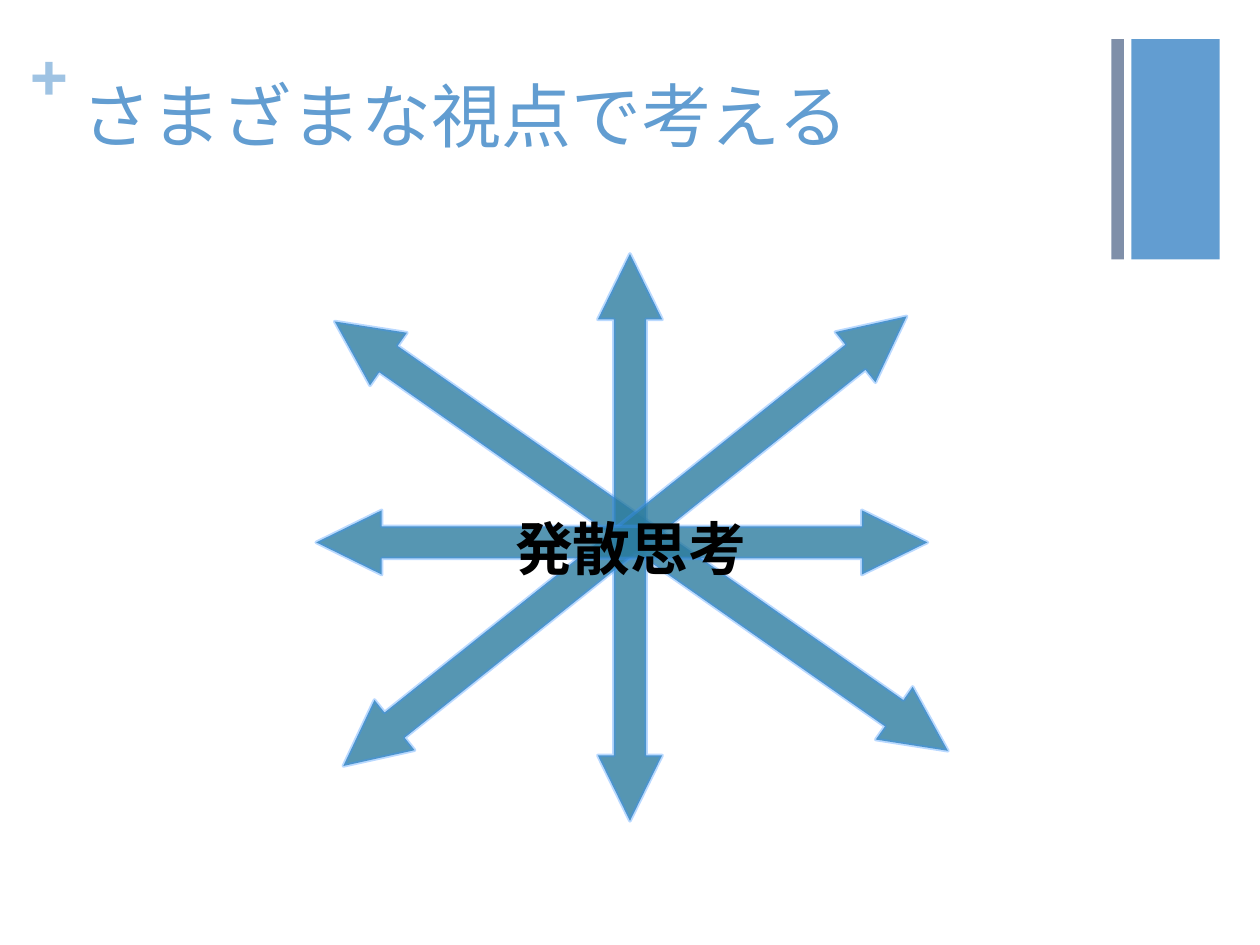
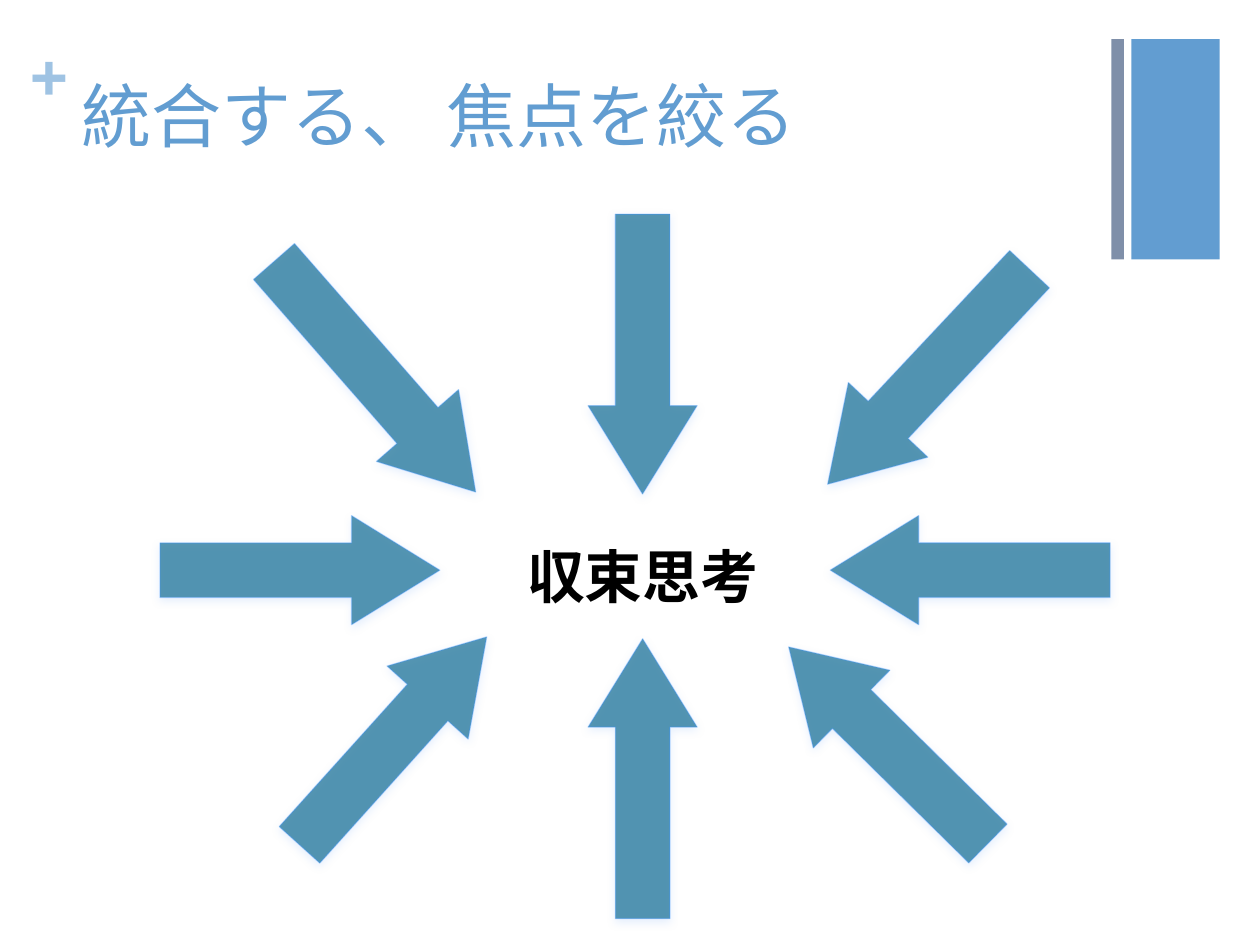
from lxml.etree import SubElement
from pptx import Presentation
from pptx.dml.color import RGBColor
from pptx.enum.shapes import MSO_SHAPE
from pptx.enum.text import MSO_ANCHOR, PP_ALIGN
from pptx.oxml.ns import qn
from pptx.util import Inches, Pt

BLUE = RGBColor(0x62, 0x9D, 0xD1)
PALE_BLUE = RGBColor(0x9F, 0xC3, 0xE3)
SLATE = RGBColor(0x7F, 0x8F, 0xA9)
TEAL = RGBColor(0x2C, 0x7C, 0x9F)
OUTLINE = RGBColor(0x3A, 0x93, 0xFF)
GLOW = RGBColor(0xAC, 0xCB, 0xF9)
BLACK = RGBColor(0x00, 0x00, 0x00)

JAPANESE_FONT = "Noto Sans CJK JP"
ORNAMENT_FONT = "TeX Gyre Bonum"
COLUMNS, ROWS = 100, 75


def set_opacity(color_element, percent):
    SubElement(color_element, qn("a:alpha"), val=str(percent * 1000))


class Deck:
    """Holds the style and the current slide; lengths are grid columns and rows."""

    def __init__(self):
        self.presentation = Presentation()
        self.presentation.slide_width = Inches(10)
        self.presentation.slide_height = Inches(7.5)
        self.column = self.presentation.slide_width / COLUMNS
        self.row = self.presentation.slide_height / ROWS
        self.slide = None

    def frame(self, left, top, width, height):
        return (round(left * self.column), round(top * self.row),
                round(width * self.column), round(height * self.row))

    def new_slide(self, title):
        blank = self.presentation.slide_layouts[6]
        self.slide = self.presentation.slides.add_slide(blank)
        self.band(89.8, 7, BLUE)
        self.text("+", (2.4, 2.5, 2.9, 6.1), 36, PALE_BLUE, ORNAMENT_FONT,
                  bold=True, padded=False)
        self.band(88.2, 1, SLATE)
        self.text(title, (5.5, 5.3, 82.6, 12.2), 40, BLUE)

    def band(self, left, width, color):
        band = self.slide.shapes.add_shape(
            MSO_SHAPE.RECTANGLE, *self.frame(left, 3.1, width, 17.5))
        band.shadow.inherit = False
        band.fill.solid()
        band.fill.fore_color.rgb = color
        band.line.fill.background()

    def text(self, words, area, size, color, font_name=JAPANESE_FONT,
             bold=False, padded=True):
        box = self.slide.shapes.add_textbox(*self.frame(*area))
        frame = box.text_frame
        frame.word_wrap = True
        frame.margin_left = frame.margin_right = Inches(0.1 if padded else 0)
        frame.margin_top = frame.margin_bottom = Inches(0.05 if padded else 0)
        frame.text = words
        run = frame.paragraphs[0].runs[0]
        run.font.size = Pt(size)
        run.font.bold = bold
        run.font.color.rgb = color
        run.font.name = font_name
        SubElement(run.font._element, qn("a:ea"), typeface=font_name)
        return frame

    def theme_word(self, words, area):
        frame = self.text(words, area, 33, BLACK, bold=True)
        frame.vertical_anchor = MSO_ANCHOR.BOTTOM
        frame.paragraphs[0].alignment = PP_ALIGN.CENTER

    def arrow(self, kind, center, length, thickness, angle, head, line_width):
        x, y = center
        arrow = self.slide.shapes.add_shape(kind, *self.frame(
            x - length / 2, y - thickness / 2, length, thickness))
        arrow.rotation = angle
        arrow.adjustments[0] = 0.5
        arrow.adjustments[1] = head
        arrow.shadow.inherit = False
        arrow.fill.solid()
        arrow.fill.fore_color.rgb = TEAL
        arrow.line.color.rgb = OUTLINE
        arrow.line.width = Pt(line_width)
        properties = arrow._element.spPr
        for route, percent in (("a:solidFill", 80), ("a:ln/a:solidFill", 34)):
            set_opacity(properties.xpath(f"{route}/a:srgbClr")[0], percent)
        return arrow

    def outward_arrow(self, center, length, angle):
        self.arrow(MSO_SHAPE.LEFT_RIGHT_ARROW, center, length, 5.1, angle, 1.02, 2)

    def inward_arrow(self, center, length, angle):
        arrow = self.arrow(MSO_SHAPE.LEFT_ARROW, center, length, 8.65, angle, 0.81, 0.75)
        effects = arrow._element.spPr.find(qn("a:effectLst"))
        shadow = SubElement(effects, qn("a:outerShdw"), blurRad=str(Pt(5)),
                            dist=str(Pt(1.8)), dir=str(90 * 60000), rotWithShape="0")
        set_opacity(SubElement(shadow, qn("a:srgbClr"), val=str(GLOW)), 35)


def divergent_thinking(deck):
    deck.new_slide("さまざまな視点で考える")
    for center, length, angle in (
        ((50.9, 42.55), 59.4, 215),
        ((50, 42.65), 45, 270),
        ((49.6, 42.95), 57.2, 141.4),
        ((49.35, 43.05), 48.5, 0),
    ):
        deck.outward_arrow(center, length, angle)
    deck.theme_word("発散思考", (26.1, 31.7, 47.9, 15))


def convergent_thinking(deck):
    deck.new_slide("統合する、 焦点を絞る")
    for center, length, angle in (
        ((29.75, 29.9), 24.3, 228.8),
        ((23.8, 45.25), 22.2, 180),
        ((77, 45.25), 22.2, 0),
        ((51, 28.1), 22.2, 270),
        ((73.7, 29.9), 23.4, 313.2),
        ((31.2, 58.8), 22.2, 132),
        ((51, 61.8), 22.2, 90),
        ((70.5, 59.15), 22.2, 44.6),
    ):
        deck.inward_arrow(center, length, angle)
    deck.theme_word("収束思考", (31.4, 35.1, 39.2, 13.8))


def main():
    deck = Deck()
    divergent_thinking(deck)
    convergent_thinking(deck)
    deck.presentation.save("out.pptx")


if __name__ == "__main__":
    main()
